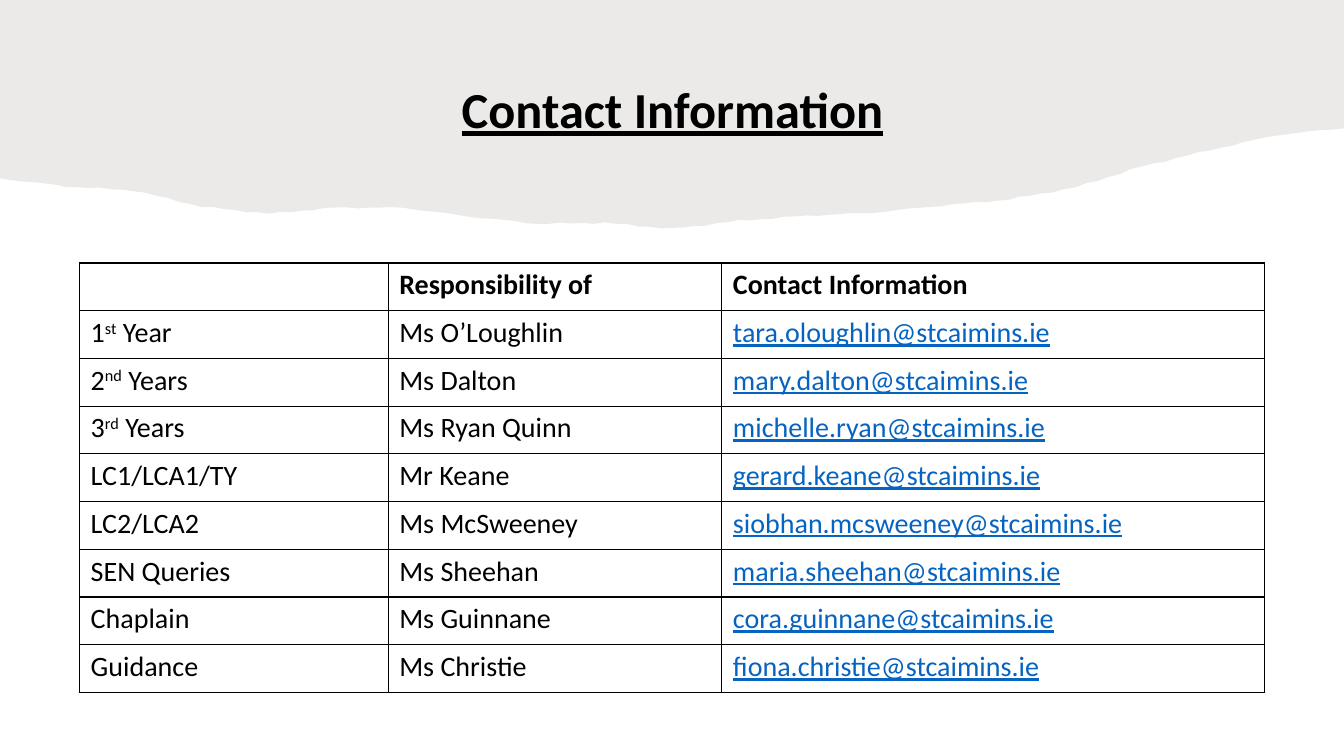
from math import sin

from lxml import etree
from pptx import Presentation
from pptx.dml.color import RGBColor
from pptx.enum.text import MSO_ANCHOR, PP_ALIGN
from pptx.oxml.ns import qn
from pptx.util import Inches, Pt

BOTTOM = MSO_ANCHOR.BOTTOM
CENTER = PP_ALIGN.CENTER
COLORS = {"text": "000000", "link": "0563C1", "band": "82766A"}
FONT = "Calibri"
PAGE_WIDTH, PAGE_HEIGHT = 13.33, 7.5

# Depth of the torn edge at equal steps from the left side to the right side
EDGE_DEPTHS = [
    1.77, 1.85, 1.89, 2.05, 2.12, 2.06, 2.06, 2.15, 2.22, 2.21, 2.27,
    2.19, 2.14, 2.11, 2.04, 1.98, 1.86, 1.65, 1.49, 1.34, 1.27,
]
POINTS_PER_STEP = 6
ROUGHNESS = 0.01

TABLE_LEFT, TABLE_TOP, TABLE_HEIGHT = 0.79, 2.61, 4.26
COLUMN_WIDTHS = [3.06, 3.31, 5.38]
HEADINGS = ("", "Responsibility of", "Contact Information")
# "^" stands before and after a superscript
CONTACTS = [
    ("1^st^ Year", "Ms O’Loughlin", "tara.oloughlin@stcaimins.ie"),
    ("2^nd^ Years", "Ms Dalton", "mary.dalton@stcaimins.ie"),
    ("3^rd^ Years", "Ms Ryan Quinn", "michelle.ryan@stcaimins.ie"),
    ("LC1/LCA1/TY", "Mr Keane", "gerard.keane@stcaimins.ie"),
    ("LC2/LCA2", "Ms McSweeney", "siobhan.mcsweeney@stcaimins.ie"),
    ("SEN Queries", "Ms Sheehan", "maria.sheehan@stcaimins.ie"),
    ("Chaplain", "Ms Guinnane", "cora.guinnane@stcaimins.ie"),
    ("Guidance", "Ms Christie", "fiona.christie@stcaimins.ie"),
]


def set_font(font, size, color, bold=False, underline=False):
    font.name = FONT
    font.size = Pt(size)
    font.bold = bold
    font.underline = underline
    font.color.rgb = RGBColor.from_string(COLORS[color])


def add_borders(cell):
    """Draw a thin line on all four sides of a table cell."""
    properties = cell._tc.get_or_add_tcPr()
    for index, side in enumerate(("a:lnL", "a:lnR", "a:lnT", "a:lnB")):
        line = etree.Element(qn(side), w=str(Pt(1)))
        fill = etree.SubElement(line, qn("a:solidFill"))
        etree.SubElement(fill, qn("a:srgbClr"), val=COLORS["text"])
        properties.insert(index, line)


deck = Presentation()
deck.slide_width = Inches(PAGE_WIDTH)
deck.slide_height = Inches(PAGE_HEIGHT)
page = deck.slides.add_slide(deck.slide_layouts[6])

# Torn paper band: straight between the depths, roughened by two waves
step_width = PAGE_WIDTH / (len(EDGE_DEPTHS) - 1)
outline = page.shapes.build_freeform(0, 0)
corners = [(0, EDGE_DEPTHS[0])]
for step, (start, end) in enumerate(zip(EDGE_DEPTHS, EDGE_DEPTHS[1:])):
    for point in range(1, POINTS_PER_STEP + 1):
        share = point / POINTS_PER_STEP
        x = (step + share) * step_width
        ripple = ROUGHNESS * (sin(11 * x) + sin(29 * x)) / 2
        corners.append((x, start + (end - start) * share + ripple))
corners.append((PAGE_WIDTH, 0))
outline.add_line_segments([(Inches(x), Inches(y)) for x, y in corners], close=True)
band = outline.convert_to_shape()
band.shadow.inherit = False
band.line.fill.background()
band.fill.solid()
band.fill.fore_color.rgb = RGBColor.from_string(COLORS["band"])
band_color = band._element.spPr.find(qn("a:solidFill")).find(qn("a:srgbClr"))
etree.SubElement(band_color, qn("a:alpha"), val="15000")

# Title
title_box = page.shapes.add_textbox(
    Inches(0.91), Inches(0.54), Inches(11.52), Inches(0.89)
)
title_box.text_frame.word_wrap = True
title_box.text_frame.vertical_anchor = BOTTOM
title = title_box.text_frame.paragraphs[0]
title.text = "Contact Information"
title.alignment = CENTER
title.line_spacing = 0.9
set_font(title.font, 36, "text", bold=True, underline=True)

# Contact table
table_rows = [HEADINGS] + CONTACTS
table = page.shapes.add_table(
    len(table_rows), len(COLUMN_WIDTHS), Inches(TABLE_LEFT), Inches(TABLE_TOP),
    Inches(sum(COLUMN_WIDTHS)), Inches(TABLE_HEIGHT),
).table
table.first_row = False
table.horz_banding = False
for column, width in zip(table.columns, COLUMN_WIDTHS):
    column.width = Inches(width)

for row, texts in zip(table.rows, table_rows):
    row.height = Inches(TABLE_HEIGHT / len(table_rows))
    is_header = texts is HEADINGS
    for cell, text in zip(row.cells, texts):
        cell.fill.background()
        cell.margin_left = cell.margin_right = Inches(0.11)
        add_borders(cell)
        para = cell.text_frame.paragraphs[0]
        is_link = "@" in text
        set_font(para.font, 20, "link" if is_link else "text",
                 bold=is_header, underline=is_link)
        if not text:
            continue
        for part_index, part in enumerate(text.split("^")):
            span = para.add_run()
            span.text = part
            if part_index == 1:
                span.font._element.set("baseline", "30000")

deck.save("out.pptx")
